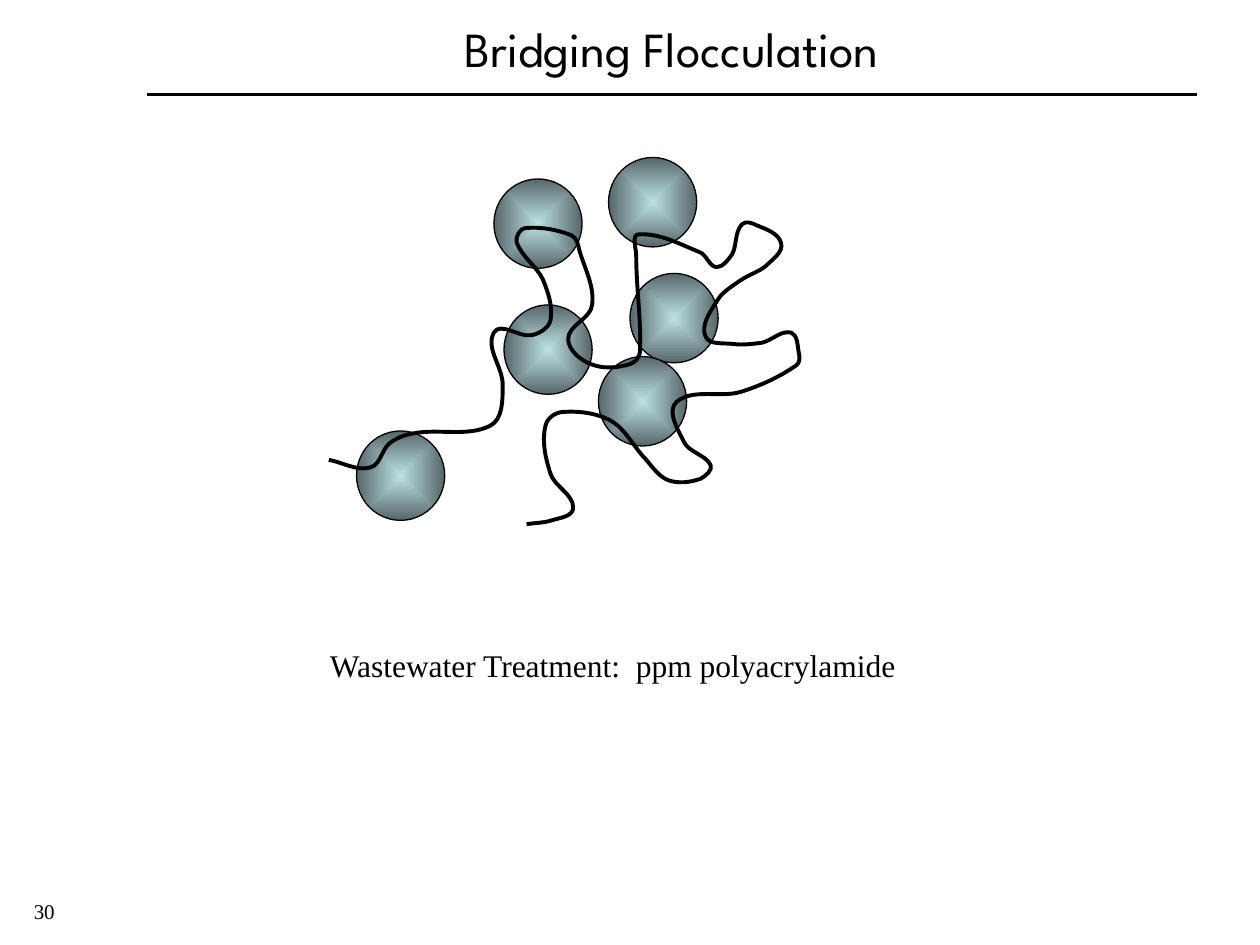
import math

from lxml import etree
from pptx import Presentation
from pptx.dml.color import RGBColor
from pptx.enum.shapes import MSO_CONNECTOR, MSO_SHAPE
from pptx.enum.text import MSO_ANCHOR, MSO_AUTO_SIZE, PP_ALIGN
from pptx.oxml import parse_xml
from pptx.oxml.ns import nsdecls, qn
from pptx.util import Pt

PX = 9144  # EMU per px, 100 px to the inch
LEFT, CENTER = PP_ALIGN.LEFT, PP_ALIGN.CENTER
TOP, MIDDLE = MSO_ANCHOR.TOP, MSO_ANCHOR.MIDDLE
STRAIGHT, OVAL = MSO_CONNECTOR.STRAIGHT, MSO_SHAPE.OVAL
FIT_SHAPE, NO_FIT = MSO_AUTO_SIZE.SHAPE_TO_FIT_TEXT, MSO_AUTO_SIZE.NONE

BLACK = "000000"
PARTICLE_COLOR = "BBE0E3"
PARTICLE_SIZE = (70, 71)
PARTICLES = [(392, 142), (400, 242), (500, 217), (283, 342), (475, 283), (483, 125)]
RULE = (117, 75, 950, 75)

# Points that the polymer chain passes through.
POLYMER = [
    (261, 365), (294, 371), (309, 352), (328, 344), (389, 338), (399, 307),
    (392, 264), (422, 266), (437, 254), (431, 222), (410, 192), (417, 181),
    (454, 187), (460, 199), (470, 242), (451, 269), (469, 289), (500, 289),
    (508, 279), (505, 203), (507, 186), (555, 200), (569, 212), (581, 202),
    (589, 178), (601, 179), (620, 193), (608, 211), (587, 223), (569, 239),
    (560, 267), (582, 273), (605, 272), (628, 264), (634, 280), (632, 290),
    (588, 311), (537, 319), (543, 351), (564, 369), (556, 380), (530, 381),
    (513, 365), (485, 334), (447, 327), (433, 338), (437, 376), (455, 403),
    (438, 413), (418, 416),
]


def color(hex_value):
    return RGBColor.from_string(hex_value)


def emu(*lengths):
    return [length * PX for length in lengths]


def style_line(line, width):
    line.color.rgb = color(BLACK)
    line.width = Pt(width)


def add_text(slide, text, box, size, font="Times New Roman", align=CENTER,
             anchor=MIDDLE, wrap=False):
    frame = slide.shapes.add_textbox(*emu(*box)).text_frame
    frame.word_wrap = wrap
    frame.auto_size = NO_FIT if wrap else FIT_SHAPE
    frame.vertical_anchor = anchor
    paragraph = frame.paragraphs[0]
    paragraph.alignment = align
    run = paragraph.add_run()
    run.text = text
    run.font.name = font
    run.font.size = Pt(size)
    run.font.color.rgb = color(BLACK)


def add_rule(slide):
    rule = slide.shapes.add_connector(STRAIGHT, *emu(*RULE))
    style_line(rule.line, 2.25)
    etree.SubElement(rule._element.spPr, qn("a:effectLst"))


def add_particle(slide, left, top):
    """Add a sphere shaded from a light centre to a dark rim."""
    shape = slide.shapes.add_shape(OVAL, *emu(left, top, *PARTICLE_SIZE))
    shape.shadow.inherit = False
    style_line(shape.line, 0.75)
    gradient = parse_xml(
        f'<a:gradFill {nsdecls("a")} rotWithShape="0"><a:gsLst>'
        f'<a:gs pos="0"><a:srgbClr val="{PARTICLE_COLOR}"/></a:gs>'
        f'<a:gs pos="100000"><a:srgbClr val="{PARTICLE_COLOR}">'
        '<a:gamma/><a:shade val="46275"/><a:invGamma/></a:srgbClr></a:gs></a:gsLst>'
        '<a:path path="shape"><a:fillToRect l="50000" t="50000" r="50000" b="50000"/>'
        '</a:path></a:gradFill>')
    shape._element.spPr.find(qn("a:prstGeom")).addnext(gradient)


def smooth_curves(knots):
    """Return two control points and an end point for each step between knots.

    Each handle is a third of its step long and parallel to the line
    between the neighbours of its knot.
    """
    padded = [knots[0], *knots, knots[-1]]
    angles = [math.atan2(after[1] - before[1], after[0] - before[0])
              for before, after in zip(padded, padded[2:])]
    points = []
    for index, (start, end) in enumerate(zip(knots, knots[1:])):
        handle = math.dist(start, end) / 3
        for (x, y), angle, reach in ((start, angles[index], handle),
                                     (end, angles[index + 1], -handle)):
            points.append((x + reach * math.cos(angle), y + reach * math.sin(angle)))
        points.append(end)
    return points


def add_polymer(slide):
    """Draw the chain, turning each three line points into one Bézier curve."""
    builder = slide.shapes.build_freeform(*POLYMER[0], scale=PX)
    builder.add_line_segments(smooth_curves(POLYMER), close=False)
    shape = builder.convert_to_shape()
    shape.shadow.inherit = False
    shape.fill.background()
    style_line(shape.line, 2.25)
    segments = list(shape._element.iter(qn("a:lnTo")))
    outline = segments[0].getparent()
    # Finer path units keep the control points from snapping to whole px.
    for start in range(0, len(segments), 3):
        curve = etree.SubElement(outline, qn("a:cubicBezTo"))
        for segment in segments[start:start + 3]:
            curve.append(segment[0])
            outline.remove(segment)


def main():
    presentation = Presentation()
    presentation.slide_width, presentation.slide_height = emu(1000, 750)
    slide = presentation.slides.add_slide(presentation.slide_layouts[6])
    add_rule(slide)
    add_text(slide, "30", (17, 708, 40, 30), 12, align=LEFT, anchor=TOP)
    add_text(slide, "Bridging Flocculation", (108, 17, 850, 42), 28,
             font="League Spartan", wrap=True)
    add_text(slide, "Wastewater Treatment:  ppm polyacrylamide", (250, 508, 473, 40), 18)
    for left, top in PARTICLES:
        add_particle(slide, left, top)
    add_polymer(slide)
    presentation.save("out.pptx")


if __name__ == "__main__":
    main()
